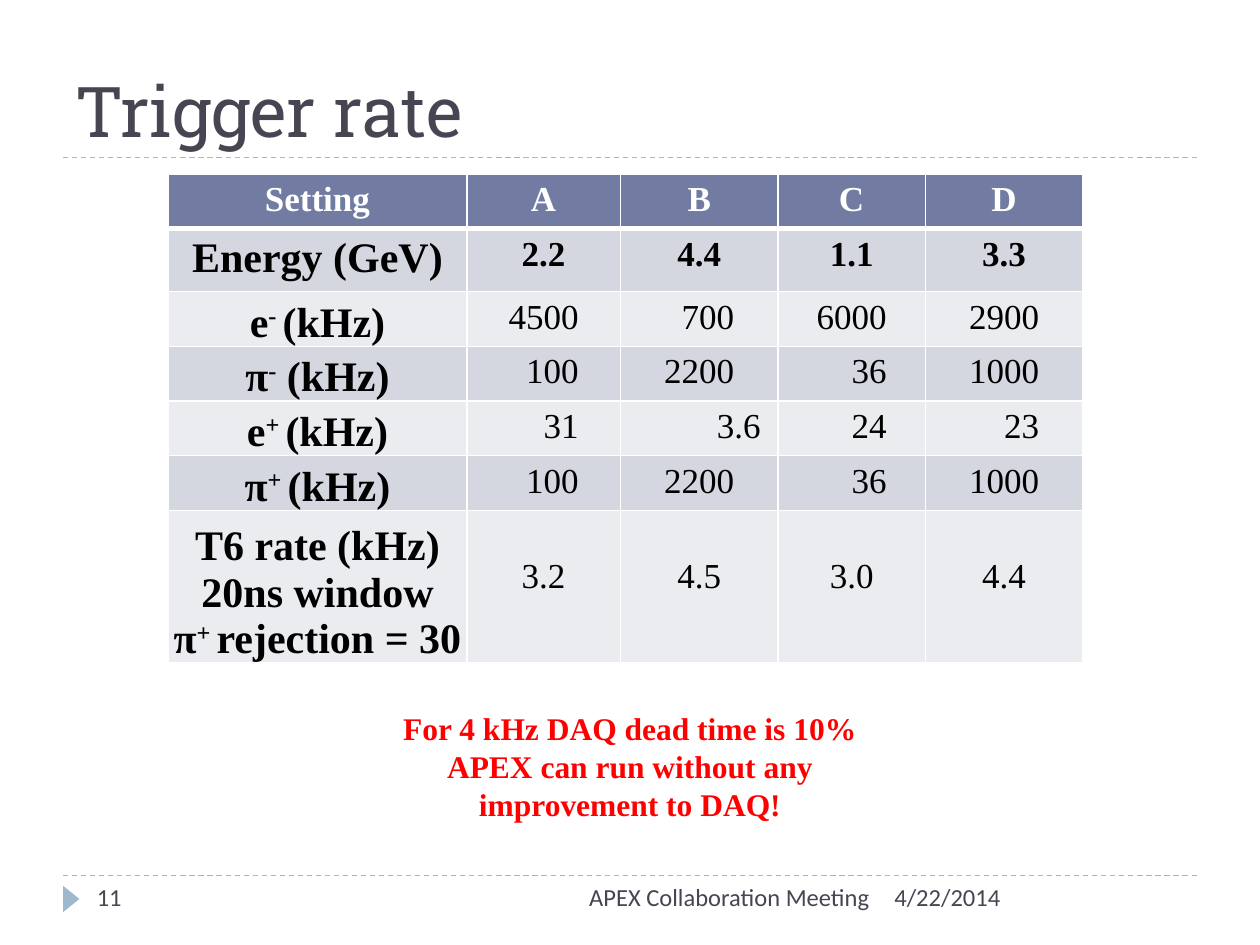
from dataclasses import dataclass

from lxml.etree import SubElement
from pptx import Presentation
from pptx.dml.color import RGBColor as RGB
from pptx.enum.dml import MSO_LINE
from pptx.enum.shapes import MSO_CONNECTOR as CXN, MSO_SHAPE as SHAPE
from pptx.enum.text import MSO_ANCHOR as ANCHOR, PP_ALIGN as ALIGN
from pptx.oxml.ns import qn
from pptx.util import Inches, Pt

CELL = 0.5  # inches per grid unit: 20 columns by 15 rows


@dataclass(frozen=True)
class Theme:
    ink: str = "464653"
    accent: str = "9FB8CD"
    header: str = "727CA3"
    bands: tuple = ("D5D7E0", "EBECF0")
    black: str = "000000"
    white: str = "FFFFFF"
    alert: str = "FF0000"
    title_font: str = "Roboto Slab"
    body_font: str = "Times New Roman"
    foot_font: str = "Calibri"
    title: int = 40
    label: int = 24
    value: int = 20
    note: int = 18
    foot: int = 14


T = Theme()


@dataclass(frozen=True)
class Box:
    """An area in grid units."""
    x: float
    y: float
    w: float
    h: float

    def inner(self, x, y, w, h):
        return Box(self.x + x, self.y + y, w, h)

    def emu(self):
        return [grid(v) for v in (self.x, self.y, self.w, self.h)]


def grid(units):
    return Inches(units * CELL)


def write(tf, lines, font, size, color, bold=False, align=ALIGN.LEFT):
    """One paragraph per line; text between ^ marks is superscript."""
    for i, line in enumerate(lines):
        p = tf.paragraphs[0] if i == 0 else tf.add_paragraph()
        p.alignment = align
        for j, text in enumerate(line.split("^")):
            r = p.add_run()
            r.text = text
            f = r.font
            f.name, f.size, f.bold = font, Pt(size), bold
            f.color.rgb = RGB.from_string(color)
            if j % 2:
                r._r.get_or_add_rPr().set("baseline", "30000")


def add_text(s, box, lines, *style, anchor=ANCHOR.TOP, **options):
    tf = s.shapes.add_textbox(*box.emu()).text_frame
    tf.word_wrap = True
    tf.vertical_anchor = anchor
    write(tf, lines, *style, **options)


def add_rule(s, box, y):
    """Dashed line across the box."""
    left, top, right = grid(box.x), grid(box.y + y), grid(box.x + box.w)
    line = s.shapes.add_connector(CXN.STRAIGHT, left, top, right, top)
    line.line.color.rgb = RGB.from_string(T.accent)
    line.line.width = Pt(0.75)
    line.line.dash_style = MSO_LINE.DASH
    SubElement(line._element.spPr, qn("a:effectLst"))


def add_title(s, box, text):
    add_rule(s, box, box.h)
    add_text(s, box, [text], T.title_font, T.title, T.ink, anchor=ANCHOR.BOTTOM)


def add_footer(s, box, number, event, date):
    add_rule(s, box, 0)
    # Page marker
    mark = s.shapes.add_shape(SHAPE.ISOSCELES_TRIANGLE,
                              *box.inner(-0.08, 0.24, 0.42, 0.26).emu())
    mark.rotation = 90
    mark.shadow.inherit = False
    mark.fill.solid()
    mark.fill.fore_color.rgb = RGB.from_string(T.accent)
    mark.line.fill.background()
    # Page number, date and event
    for text, x, w, align in ((number, 0.34, 4.34, ALIGN.LEFT),
                              (date, 13, 5, ALIGN.LEFT),
                              (event, 5.34, 7.66, ALIGN.RIGHT)):
        add_text(s, box.inner(x, 0, w, box.h), [text],
                 T.foot_font, T.foot, T.ink, align=align)


def style_cell(cell, fill, bottom=1):
    tcPr = cell._tc.get_or_add_tcPr()
    for side, width in (("L", 1), ("R", 1), ("T", 1), ("B", bottom)):
        ln = SubElement(tcPr, qn(f"a:ln{side}"), w=str(Pt(width)))
        SubElement(SubElement(ln, qn("a:solidFill")), qn("a:srgbClr"), val=T.white)
    cell.fill.solid()
    cell.fill.fore_color.rgb = RGB.from_string(fill)


COLS = (4.74, 2.44, 2.5, 2.34, 2.5)
ROWS = (0.86, 0.92, 0.82, 0.82, 0.82, 0.82, 2.22)
DIGITS = 1.11     # width of a four-digit number
DECIMALS = 0.42   # width by which a decimal part hangs past the digits
DATA = (
    ("Setting", "A", "B", "C", "D"),
    ("Energy (GeV)", "2.2", "4.4", "1.1", "3.3"),
    ("e^- ^(kHz)", "4500", "700", "6000", "2900"),
    ("π^-^ (kHz)", "100", "2200", "36", "1000"),
    ("e^+ ^(kHz)", "31", "3.6", "24", "23"),
    ("π^+ ^(kHz)", "100", "2200", "36", "1000"),
    ("T6 rate (kHz)\n20ns window\nπ^+ ^rejection = 30", "3.2", "4.5", "3.0", "4.4"),
)


def add_rates(s, box):
    tbl = s.shapes.add_table(len(ROWS), len(COLS), *box.emu()).table
    tbl.first_row = tbl.horz_banding = False
    for column, w in zip(tbl.columns, COLS):
        column.width = grid(w)
    for row, h in zip(tbl.rows, ROWS):
        row.height = grid(h)

    last = len(DATA) - 1
    for i, values in enumerate(DATA):
        head = i == 0
        fill = T.header if head else T.bands[(i - 1) % 2]
        for j, text in enumerate(values):
            cell = tbl.cell(i, j)
            style_cell(cell, fill, bottom=3 if head else 1)
            label = j == 0 and not head
            align = ALIGN.CENTER
            if label and i > 1:
                # Tight labels resting on the row's bottom edge
                cell.vertical_anchor = ANCHOR.BOTTOM
                cell.margin_left = cell.margin_right = cell.margin_top = Inches(0.01)
                cell.margin_bottom = 0
            elif 1 < i < last:
                # Rates line up on their units digit
                align = ALIGN.RIGHT
                hang = DECIMALS if "." in text else 0
                cell.margin_right = grid((COLS[j] - DIGITS) / 2 - hang)
            elif i == last:
                # Result sits level with the label's second line
                cell.margin_top = grid(0.74)
            write(cell.text_frame, text.split("\n"), T.body_font,
                  T.label if label else T.value, T.white if head else T.black,
                  bold=i < 2 or label, align=align)


def add_note(s, box, lines):
    add_text(s, box, lines, T.body_font, T.note, T.alert,
             bold=True, align=ALIGN.CENTER)


def main():
    prs = Presentation()
    prs.slide_width, prs.slide_height = grid(20), grid(15)
    s = prs.slides.add_slide(prs.slide_layouts[6])
    add_title(s, Box(1, 0.34, 18, 2.16), "Trigger rate")
    add_footer(s, Box(1, 13.9, 18, 0.8), "11", "APEX Collaboration Meeting", "4/22/2014")
    add_rates(s, Box(2.67, 2.76, sum(COLS), sum(ROWS)))
    add_note(s, Box(6, 11.16, 8, 2.02),
             ["For 4 kHz DAQ dead time is 10%",
              "APEX can run without any improvement to DAQ!"])
    prs.save("out.pptx")


if __name__ == "__main__":
    main()
